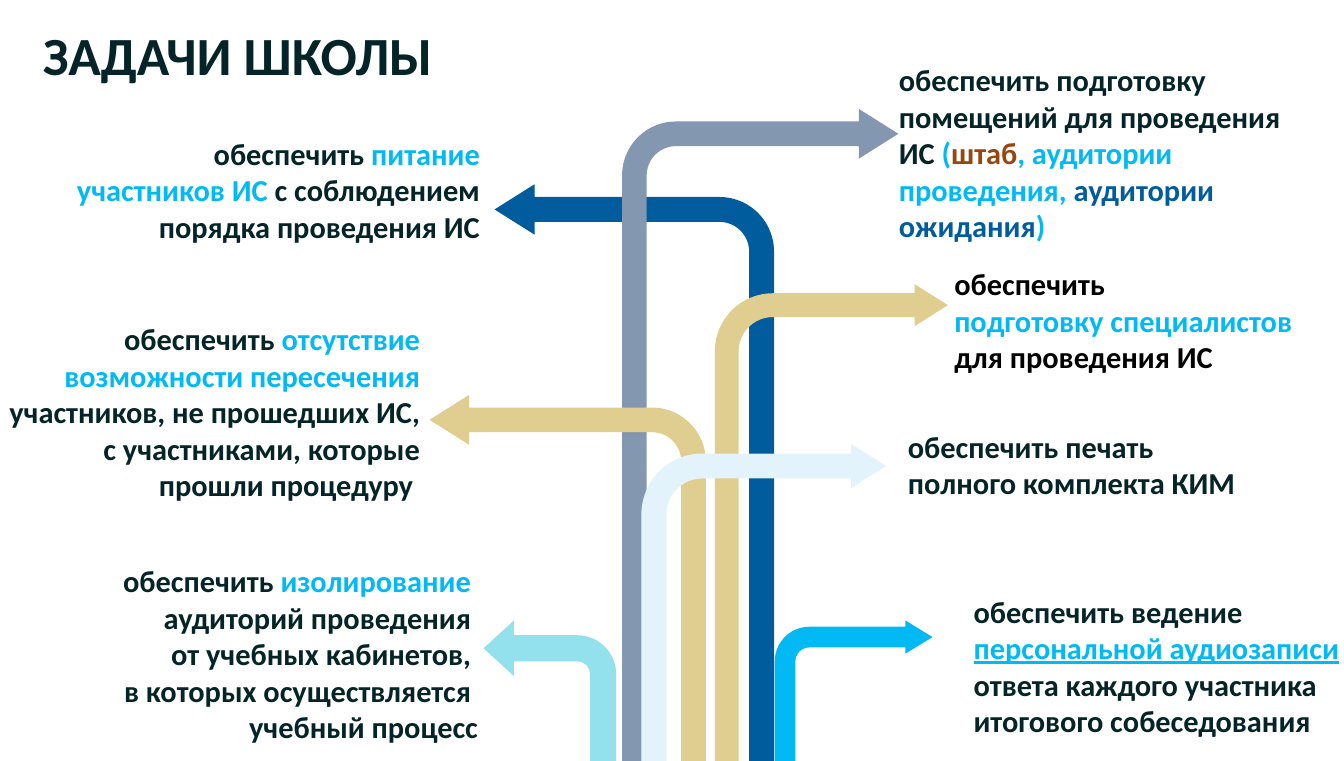
from dataclasses import dataclass

from pptx import Presentation
from pptx.dml.color import RGBColor
from pptx.enum.shapes import MSO_SHAPE
from pptx.enum.text import MSO_AUTO_SIZE, PP_ALIGN
from pptx.util import Inches, Pt


@dataclass(frozen=True)
class Theme:
    font: str = "Calibri"
    title_size: int = 60
    task_size: int = 34
    ink: str = "052427"
    black: str = "000000"
    accent: str = "02B9F3"
    brown: str = "98460E"
    blue: str = "005C9D"
    slate: str = "8497B0"
    sand: str = "E0CE90"
    aqua: str = "93E1ED"
    ice: str = "E2F3FB"


THEME = Theme()
INK, ACCENT = THEME.ink, THEME.accent


@dataclass(frozen=True)
class Task:
    arrow_box: tuple
    bend: tuple  # shaft width, head half-width, head length, corner radius
    arrow_color: str
    text_box: tuple
    lines: list  # paragraphs made of (text, colour) pieces
    points_left: bool = False
    wrap: bool = True
    underlined: str = ""


TALL_BEND = (0.089, 0.09, 0.143, 0.195)
ROUND_BEND = (0.102, 0.09, 0.143, 0.249)

# Listed from back to front, since the arrows cross
TASKS = [
    Task((7.68, 2.86, 4.34, 9.72), TALL_BEND, THEME.blue,
         (0.99, 2.04, 6.56, 1.82),
         [[("обеспечить ", INK), ("питание участников ИС ", ACCENT),
           ("с соблюдением порядка проведения ИС", INK)]],
         points_left=True),
    Task((9.66, 1.69, 4.29, 10.89), TALL_BEND, THEME.slate,
         (13.86, 0.9, 6.48, 2.96),
         [[("обеспечить подготовку помещений для проведения ИС ", INK),
           ("(", ACCENT), ("штаб", THEME.brown),
           (", аудитории проведения, ", ACCENT),
           ("аудитории ожидания", THEME.blue), (")", ACCENT)]]),
    Task((6.67, 6.13, 4.29, 7.17), TALL_BEND, THEME.sand,
         (-0.2, 4.92, 6.82, 2.96),
         [[("обеспечить ", INK), ("отсутствие возможности пересечения ", ACCENT),
           ("участников, не прошедших ИС, с участниками, "
            "которые прошли процедуру ", INK)]],
         points_left=True),
    Task((7.51, 9.63, 2.06, 3.51), (0.197, 0.209, 0.228, 0.295), THEME.aqua,
         (0.81, 8.68, 6.71, 2.96),
         [[("обеспечить ", INK), ("изолирование ", ACCENT)],
          [("аудиторий проведения ", INK)],
          [("от учебных кабинетов, ", INK)],
          [("в которых осуществляется ", INK)],
          [("учебный процесс", INK)]],
         points_left=True),
    Task((12.03, 9.63, 2.45, 3.83), (0.131, 0.105, 0.171, 0.219), ACCENT,
         (15.02, 9.15, 7.09, 2.39),
         [[("обеспечить ведение", INK)],
          [("персональной аудиозаписи", ACCENT)],
          [("ответа каждого участника", INK)],
          [("итогового собеседования", INK)]],
         underlined="персональной аудиозаписи"),
    Task((11.1, 4.41, 3.62, 7.99), ROUND_BEND, THEME.sand,
         (14.72, 4.07, 5.49, 1.82),
         [[("обеспечить", THEME.black)],
          [("подготовку специалистов", ACCENT)],
          [("для проведения ИС", THEME.black)]],
         wrap=False),
    Task((9.96, 6.89, 3.8, 6.26), ROUND_BEND, THEME.ice,
         (14, 6.59, 6.35, 1.25),
         [[("обеспечить печать", INK)], [("полного комплекта КИМ", INK)]]),
]


def add_text(slide, box, lines, size, align, wrap=True, underlined=""):
    frame = slide.shapes.add_textbox(*map(Inches, box)).text_frame
    frame.word_wrap = wrap
    frame.auto_size = MSO_AUTO_SIZE.SHAPE_TO_FIT_TEXT
    for index, pieces in enumerate(lines):
        paragraph = frame.add_paragraph() if index else frame.paragraphs[0]
        paragraph.alignment = align
        for words, color in pieces:
            run = paragraph.add_run()
            run.text = words
            run.font.name = THEME.font
            run.font.size = Pt(size)
            run.font.bold = True
            run.font.color.rgb = RGBColor.from_string(color)
            if words == underlined:
                run.font.underline = True


def add_bent_arrow(slide, box, bend, color, points_left):
    arrow = slide.shapes.add_shape(MSO_SHAPE.BENT_ARROW, *map(Inches, box))
    arrow.shadow.inherit = False
    arrow.fill.solid()
    arrow.fill.fore_color.rgb = RGBColor.from_string(color)
    arrow.line.fill.background()
    for index, value in enumerate(bend):
        arrow.adjustments[index] = value
    if points_left:
        arrow._element.spPr.xfrm.set("flipH", "1")


def add_title(slide, box):
    add_text(slide, box, [[("ЗАДАЧИ ШКОЛЫ", INK)]],
             THEME.title_size, PP_ALIGN.CENTER)


def add_task(slide, task):
    add_bent_arrow(slide, task.arrow_box, task.bend, task.arrow_color,
                   task.points_left)
    align = PP_ALIGN.RIGHT if task.points_left else PP_ALIGN.LEFT
    add_text(slide, task.text_box, task.lines, THEME.task_size, align,
             task.wrap, task.underlined)


def main():
    presentation = Presentation()
    presentation.slide_width = Inches(20.87)
    presentation.slide_height = Inches(11.81)
    slide = presentation.slides.add_slide(presentation.slide_layouts[6])
    add_title(slide, (-1.78, 0.29, 10.94, 1.11))
    for task in TASKS:
        add_task(slide, task)
    presentation.save("out.pptx")


if __name__ == "__main__":
    main()
